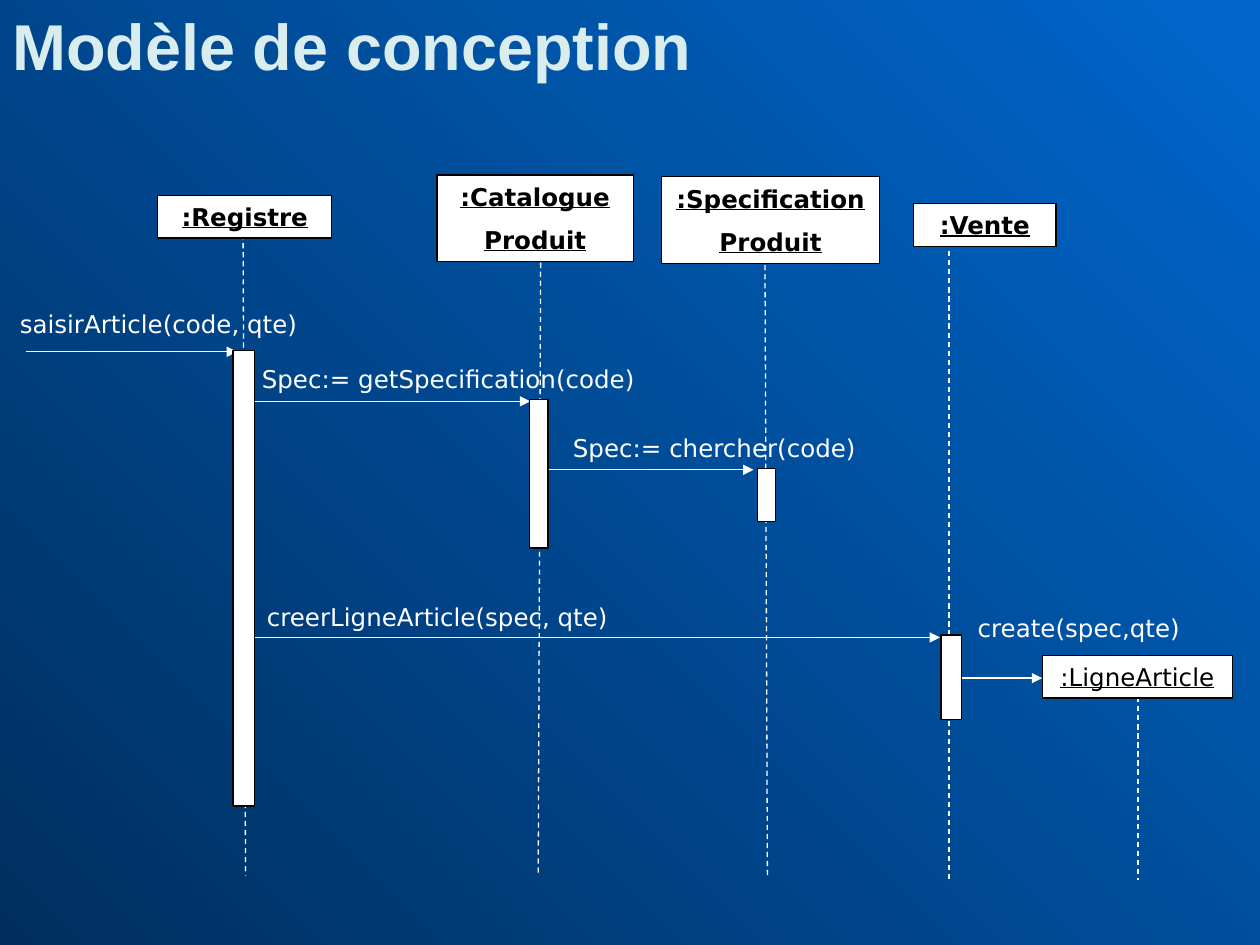
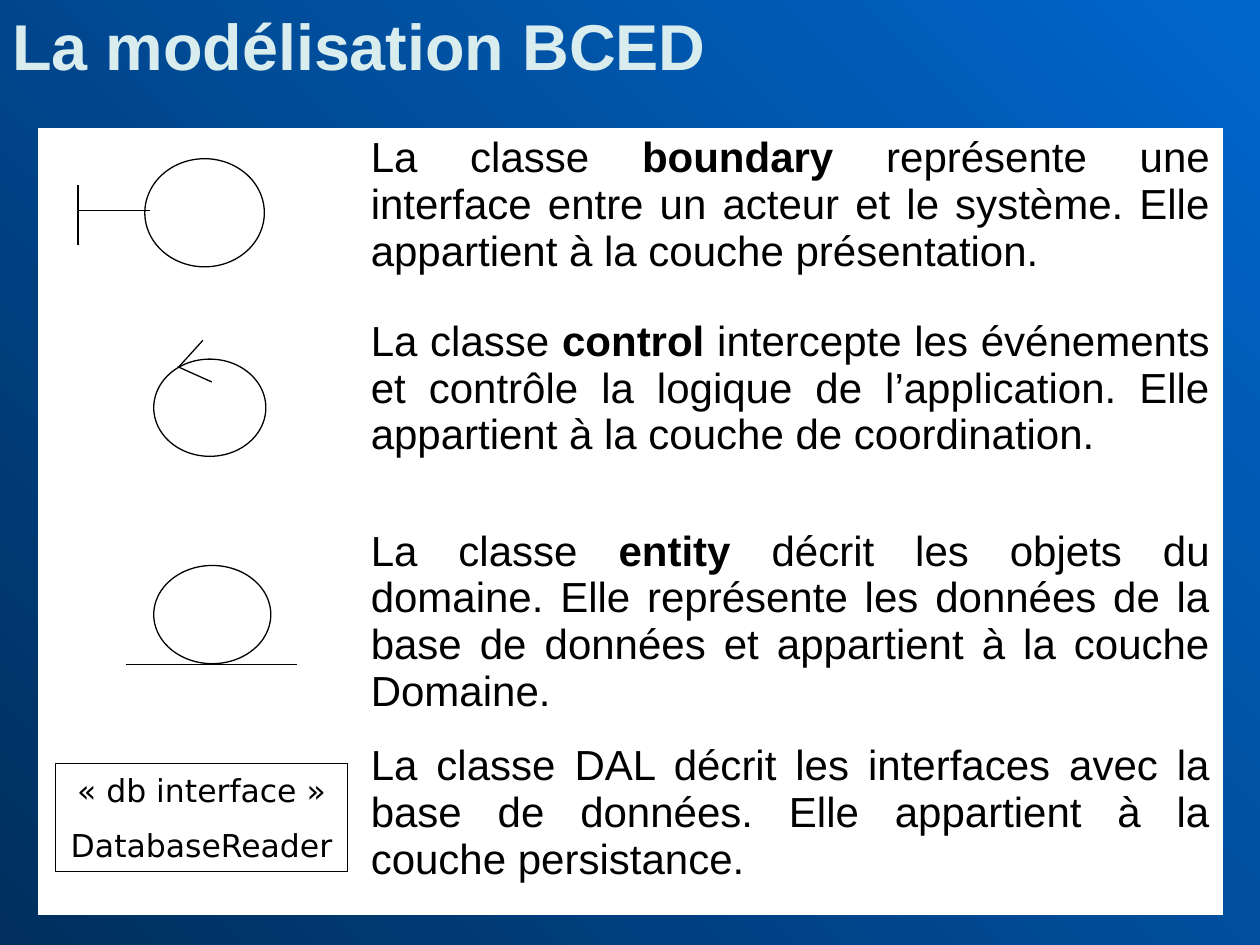
from lxml import etree
from pptx import Presentation
from pptx.dml.color import RGBColor
from pptx.enum import dml, shapes, text
from pptx.oxml import ns
from pptx.util import Cm, Pt

COLOURS = {
    "deep": "002F5E",
    "bright": "0066CC",
    "title": "D9EDEF",
    "white": "FFFFFF",
    "black": "000000",
}
TITLE_FONT = "Arial"
DIAGRAM_FONT = "DejaVu Sans"
RECTANGLE = shapes.MSO_SHAPE.RECTANGLE
OVAL = shapes.MSO_SHAPE.OVAL

OBJECTS = [
    (":Registre", 3.18, 3.94, 3.51, 0.86, True),
    (":Catalogue\nProduit", 8.81, 3.53, 3.96, 1.75, True),
    (":Specification\nProduit", 13.34, 3.56, 4.39, 1.75, True),
    (":Vente", 18.42, 4.11, 2.87, 0.86, True),
    (":LigneArticle", 21.01, 13.21, 3.84, 0.86, False),
]
LIFELINES = [
    (4.9, 4.72, 4.95, 17.65),
    (10.9, 4.93, 10.85, 17.65),
    (15.42, 4.98, 15.47, 17.65),
    (19.13, 4.52, 19.13, 17.73),
    (22.94, 13.51, 22.94, 17.73),
]
ACTIVATIONS = [
    (4.7, 7.06, 0.43, 9.19),
    (10.67, 8.05, 0.38, 3.0),
    (15.27, 9.45, 0.36, 1.07),
    (18.97, 12.8, 0.41, 1.7),
]
MESSAGES = [
    ("saisirArticle(code, qte)", (0.15, 6.1, 6.48), (0.53, 4.78, 7.09)),
    ("Spec:= getSpecification(code)", (5.03, 7.21, 8.26), (5.03, 10.69, 8.09)),
    ("Spec:= chercher(code)", (11.3, 8.61, 7.01), (10.92, 15.19, 9.47)),
    ("creerLigneArticle(spec, qte)", (5.13, 12.01, 9.37), (4.83, 18.95, 12.85)),
    ("create(spec,qte)", (19.46, 12.24, 4.88), (19.35, 21.01, 13.67)),
]
CLASS_ROWS = [
    (3.7, "La classe ", "boundary", " représente une interface entre un acteur et le système. "
     "Elle appartient à la couche présentation."),
    (4.23, "La classe ", "control", " intercepte les événements et contrôle la logique de "
     "l’application. Elle appartient à la couche de coordination."),
    (4.32, "La classe ", "entity", " décrit les objets du domaine. Elle représente les données "
     "de la base de données et appartient à la couche Domaine."),
    (3.6, "La classe DAL décrit les interfaces avec la base de données. "
     "Elle appartient à la couche persistance."),
]
CLASS_SYMBOLS = [
    ((2.92, 3.2, 2.41, 2.18), [(1.6, 4.24, 3.02, 4.24), (1.57, 3.73, 1.57, 4.93)]),
    ((3.1, 7.24, 2.26, 1.96), [(3.61, 7.39, 4.09, 6.86), (3.58, 7.39, 4.27, 7.7)]),
    ((3.1, 11.4, 2.36, 1.98), [(2.54, 13.39, 5.99, 13.39)]),
]


def colour(name):
    return RGBColor.from_string(COLOURS[name])


def lengths(values):
    return [Cm(value) for value in values]


def format_run(run, font, size, colour_name, bold=False, underline=False):
    run.font.name = font
    run.font.size = Pt(size)
    run.font.color.rgb = colour(colour_name)
    run.font.bold = bold
    run.font.underline = underline


def write(frame, content, font, size, colour_name, alignment, bold=False, underline=False):
    frame.text = content
    for index, paragraph in enumerate(frame.paragraphs):
        paragraph.alignment = alignment
        if index:
            paragraph.space_before = Pt(size * 0.55)
        for run in paragraph.runs:
            format_run(run, font, size, colour_name, bold, underline)


def add_label(slide, content, place, font, size, colour_name, bold=False):
    frame = slide.shapes.add_textbox(*lengths(place)).text_frame
    frame.word_wrap = True
    write(frame, content, font, size, colour_name, text.PP_ALIGN.LEFT, bold)


def add_outlined(container, kind, place, filled=True):
    shape = container.add_shape(kind, *lengths(place))
    shape.shadow.inherit = False
    if filled:
        shape.fill.solid()
        shape.fill.fore_color.rgb = colour("white")
    else:
        shape.fill.background()
    shape.line.color.rgb = colour("black")
    shape.line.width = Pt(0.75)
    return shape


def add_box(slide, content, place, size, bold=False, underline=False, filled=True):
    frame = add_outlined(slide.shapes, RECTANGLE, place, filled).text_frame
    frame.word_wrap = False
    frame.vertical_anchor = text.MSO_ANCHOR.MIDDLE
    write(frame, content, DIAGRAM_FONT, size, "black", text.PP_ALIGN.CENTER, bold, underline)


def add_line(container, ends, colour_name, dashed=False, arrow=False):
    connector = container.add_connector(shapes.MSO_CONNECTOR.STRAIGHT, *lengths(ends))
    connector.line.color.rgb = colour(colour_name)
    connector.line.width = Pt(0.75)
    if dashed:
        connector.line.dash_style = dml.MSO_LINE.DASH
    properties = connector.element.spPr
    if arrow:
        outline = properties.find(ns.qn("a:ln"))
        etree.SubElement(outline, ns.qn("a:tailEnd"), type="triangle")
    etree.SubElement(properties, ns.qn("a:effectLst"))


def add_message(slide, content, label, arrow):
    add_label(slide, content, (*label, 0.84), DIAGRAM_FONT, 14, "white")
    start, end, height = arrow
    add_line(slide.shapes, (start, height, end, height), "white", arrow=True)


def add_class_symbol(slide, circle, strokes):
    group = slide.shapes.add_group_shape()
    add_outlined(group.shapes, OVAL, circle)
    for stroke in strokes:
        add_line(group.shapes, stroke, "black")


def add_class_table(slide):
    widths = (6.43, 17.42)
    height = sum(row[0] for row in CLASS_ROWS)
    place = lengths((0.79, 2.59, sum(widths), height))
    table = slide.shapes.add_table(len(CLASS_ROWS), len(widths), *place).table
    table.first_row = False
    table.horz_banding = False
    for column, width in zip(table.columns, widths):
        column.width = Cm(width)
    for row, (row_height, *parts) in zip(table.rows, CLASS_ROWS):
        row.height = Cm(row_height)
        for cell in row.cells:
            cell.fill.solid()
            cell.fill.fore_color.rgb = colour("white")
        paragraph = row.cells[1].text_frame.paragraphs[0]
        paragraph.alignment = text.PP_ALIGN.JUSTIFY
        for index, part in enumerate(parts):
            run = paragraph.add_run()
            run.text = part
            format_run(run, TITLE_FONT, 24, "black", bold=index == 1)


def add_titled_slide(presentation, title):
    slide = presentation.slides.add_slide(presentation.slide_layouts[6])
    fill = slide.background.fill
    fill.gradient()
    fill.gradient_angle = 45
    for stop, position, name in zip(fill.gradient_stops, (0, 1), ("deep", "bright")):
        stop.position = position
        stop.color.rgb = colour(name)
    add_label(slide, title, (0, 0, 25.4, 1.83), TITLE_FONT, 37, "title", bold=True)
    return slide


def build_sequence_slide(presentation):
    slide = add_titled_slide(presentation, "Modèle de conception")
    for lifeline in LIFELINES:
        add_line(slide.shapes, lifeline, "white", dashed=True)
    for name, *place, bold in OBJECTS:
        add_box(slide, name, place, 14, bold, underline=True)
    for message in MESSAGES:
        add_message(slide, *message)
    for activation in ACTIVATIONS:
        add_outlined(slide.shapes, RECTANGLE, activation)


def build_classes_slide(presentation):
    slide = add_titled_slide(presentation, "La modélisation BCED")
    add_class_table(slide)
    for circle, strokes in CLASS_SYMBOLS:
        add_class_symbol(slide, circle, strokes)
    add_box(slide, "« db interface »\nDatabaseReader", (1.12, 15.39, 5.89, 2.18), 18, filled=False)


def main():
    presentation = Presentation()
    presentation.slide_width = Cm(25.4)
    presentation.slide_height = Cm(19.05)
    build_sequence_slide(presentation)
    build_classes_slide(presentation)
    presentation.save("out.pptx")


if __name__ == "__main__":
    main()
